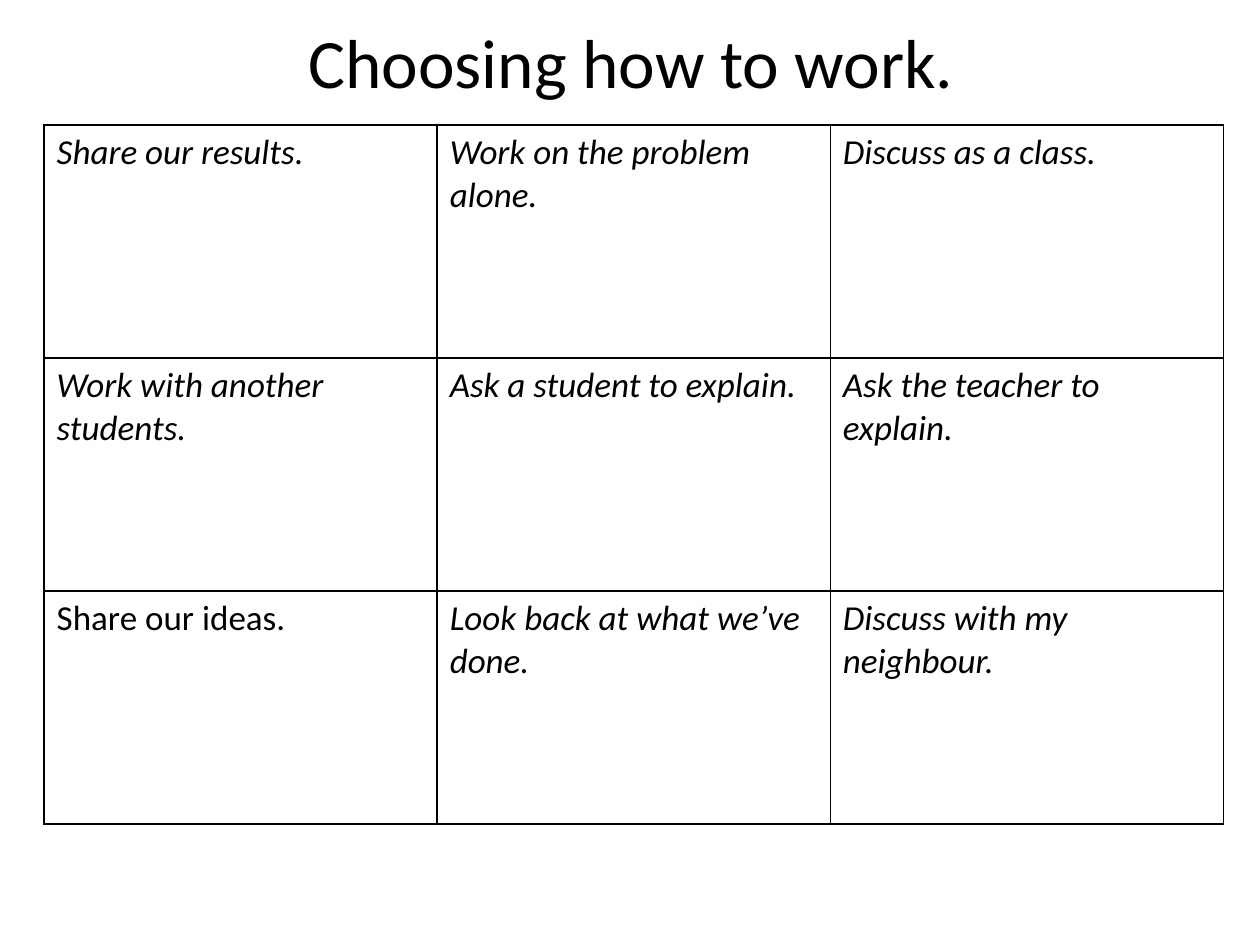
import pptx
import pptx.dml.color
import pptx.enum.text
import pptx.oxml.ns
import pptx.util
from lxml import etree

Inches = pptx.util.Inches
Pt = pptx.util.Pt
qn = pptx.oxml.ns.qn


def color(hex_string):
    return pptx.dml.color.RGBColor.from_string(hex_string)


class SlideBuilder:
    font_name = "Calibri"
    ink = "000000"
    paper = "FFFFFF"
    border_width = Pt(1)

    def __init__(self, slide):
        self.slide = slide
        slide.background.fill.solid()
        slide.background.fill.fore_color.rgb = color(self.paper)

    def add_words(self, paragraph, words, **font_format):
        run = paragraph.add_run()
        run.text = words
        run.font.color.rgb = color(self.ink)
        for attribute, value in {"name": self.font_name, **font_format}.items():
            setattr(run.font, attribute, value)

    def add_title(self, words, left, top, width, height):
        heading = self.slide.shapes.add_textbox(left, top, width, height)
        frame_format = {
            "word_wrap": True,
            "vertical_anchor": pptx.enum.text.MSO_ANCHOR.MIDDLE,
        }
        for attribute, value in frame_format.items():
            setattr(heading.text_frame, attribute, value)
        line = heading.text_frame.paragraphs[0]
        line.alignment = pptx.enum.text.PP_ALIGN.CENTER
        self.add_words(line, words, size=Pt(39.6))

    def add_border(self, cell):
        properties = cell._tc.get_or_add_tcPr()
        for position, side in enumerate(("lnL", "lnR", "lnT", "lnB")):
            edge = etree.Element(qn(f"a:{side}"), w=str(int(self.border_width)))
            fill = etree.SubElement(edge, qn("a:solidFill"))
            etree.SubElement(fill, qn("a:srgbClr"), val=self.ink)
            properties.insert(position, edge)

    def add_table(self, rows, upright, left, top, column_width, row_height):
        column_count = len(rows[0])
        grid = self.slide.shapes.add_table(
            len(rows), column_count, left, top,
            column_width * column_count, row_height * len(rows),
        ).table
        for attribute in ("first_row", "horz_banding"):
            setattr(grid, attribute, False)
        for column in grid.columns:
            column.width = column_width
        for row, choices in zip(grid.rows, rows):
            row.height = row_height
            for cell, choice in zip(row.cells, choices):
                cell.fill.background()
                self.add_border(cell)
                self.add_words(cell.text_frame.paragraphs[0], choice,
                               size=Pt(20), italic=choice not in upright)


def main():
    deck = pptx.Presentation()
    deck.slide_width, deck.slide_height = Inches(10), Inches(7.5)
    builder = SlideBuilder(deck.slides.add_slide(deck.slide_layouts[6]))
    ways_to_work = [
        ["Share our results.", "Work on the problem alone.", "Discuss as a class."],
        ["Work with another students.", "Ask a student to explain.",
         "Ask the teacher to explain."],
        ["Share our ideas.", "Look back at what we’ve done.",
         "Discuss with my neighbour."],
    ]
    builder.add_table(ways_to_work, {"Share our ideas."}, Inches(0.35),
                      Inches(0.99), Inches(3.12), Inches(1.85))
    builder.add_title("Choosing how to work.", Inches(0.51), Inches(0.13),
                      Inches(9), Inches(0.71))
    deck.save("out.pptx")


if __name__ == "__main__":
    main()
